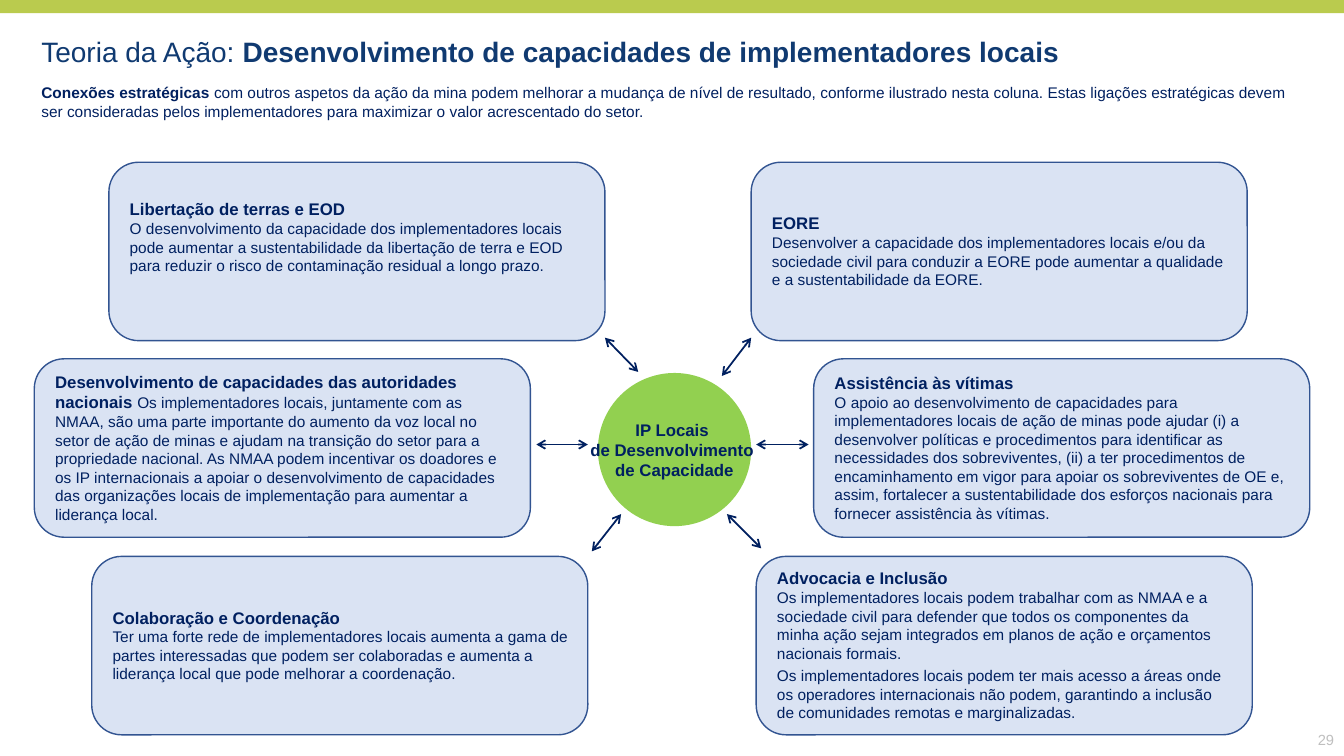
"""Build the slide on strategic connections of local implementers."""
from dataclasses import dataclass
from typing import NamedTuple

from lxml import etree
from pptx import Presentation
from pptx.dml import color
from pptx.enum import shapes, text
from pptx.oxml import ns
from pptx.util import Inches, Pt


@dataclass(frozen=True)
class Theme:
    font: str = "Arial"
    title: str = "103A71"
    ink: str = "002060"
    card: str = "DAE3F3"
    border: str = "325491"
    hub: str = "92D050"
    band: str = "BACB4E"
    number: str = "BFBFBF"
    title_size: float = 20
    heading_size: float = 12
    body_size: float = 11
    number_size: float = 10.5


class Span(NamedTuple):
    words: str
    size: float
    bold: bool = False
    ink: str = Theme.ink


class Card(NamedTuple):
    left: float
    top: float
    heading: str
    body: tuple[str, ...]
    inline: bool = False
    anchor: text.MSO_ANCHOR = text.MSO_ANCHOR.MIDDLE
    inset_top: float = 0.04


class Arrow(NamedTuple):
    start: tuple[float, float]
    end: tuple[float, float]


THEME = Theme()
CARD_WIDTH, CARD_HEIGHT = 4.92, 1.77
ROWS = (1.61, 3.56, 5.52)

CARDS = (
    Card(1.08, ROWS[0], "Libertação de terras e EOD", (
        "O desenvolvimento da capacidade dos implementadores locais pode aumentar a "
        "sustentabilidade da libertação de terra e EOD para reduzir o risco de "
        "contaminação residual a longo prazo.",),
        anchor=text.MSO_ANCHOR.TOP, inset_top=0.28),
    Card(7.45, ROWS[0], "EORE", (
        "Desenvolver a capacidade dos implementadores locais e/ou da sociedade civil "
        "para conduzir a EORE pode aumentar a qualidade e a sustentabilidade da EORE.",)),
    Card(0.34, ROWS[1], "Desenvolvimento de capacidades das autoridades nacionais ", (
        "Os implementadores locais, juntamente com as NMAA, são uma parte importante do "
        "aumento da voz local no setor de ação de minas e ajudam na transição do setor "
        "para a propriedade nacional. As NMAA podem incentivar os doadores e os IP "
        "internacionais a apoiar o desenvolvimento de capacidades das organizações "
        "locais de implementação para aumentar a liderança local.",), inline=True),
    Card(8.07, ROWS[1], "Assistência às vítimas", (
        "O apoio ao desenvolvimento de capacidades para implementadores locais de ação "
        "de minas pode ajudar (i) a desenvolver políticas e procedimentos para "
        "identificar as necessidades dos sobreviventes, (ii) a ter procedimentos de "
        "encaminhamento em vigor para apoiar os sobreviventes de OE e, assim, fortalecer "
        "a sustentabilidade dos esforços nacionais para fornecer assistência às vítimas.",)),
    Card(0.91, ROWS[2], "Colaboração e Coordenação", (
        "Ter uma forte rede de implementadores locais aumenta a gama de partes "
        "interessadas que podem ser colaboradas e aumenta a liderança local que pode "
        "melhorar a coordenação.",)),
    Card(7.5, ROWS[2], "Advocacia e Inclusão", (
        "Os implementadores locais podem trabalhar com as NMAA e a sociedade civil para "
        "defender que todos os componentes da minha ação sejam integrados em planos de "
        "ação e orçamentos nacionais formais.",
        "Os implementadores locais podem ter mais acesso a áreas onde os operadores "
        "internacionais não podem, garantindo a inclusão de comunidades remotas e "
        "marginalizadas.")),
)

ARROWS = (
    Arrow((6, 3.35), (6.33, 3.69)),
    Arrow((5.32, 4.41), (5.83, 4.41)),
    Arrow((7.5, 4.41), (8.02, 4.41)),
    Arrow((7.45, 3.35), (7.16, 3.73)),
    Arrow((7.21, 5.1), (7.55, 5.44)),
    Arrow((6.16, 5.1), (5.87, 5.47)),
)


def rgb(code: str) -> color.RGBColor:
    """Turn a hexadecimal code into a colour."""
    return color.RGBColor.from_string(code)


def write(box, paragraphs, *, align=text.PP_ALIGN.LEFT, anchor=text.MSO_ANCHOR.TOP,
          insets=(0.1, 0.05, 0.1, 0.05), wrap=True, gaps=()) -> None:
    """Fill a box with paragraphs of spans; gaps holds points after each paragraph."""
    frame = box.text_frame
    frame.word_wrap = wrap
    frame.vertical_anchor = anchor
    (frame.margin_left, frame.margin_top,
     frame.margin_right, frame.margin_bottom) = map(Inches, insets)
    for index, spans in enumerate(paragraphs):
        para = frame.add_paragraph() if index else frame.paragraphs[0]
        para.alignment = align
        if index < len(gaps):
            para.space_after = Pt(gaps[index])
        for span in spans:
            run = para.add_run()
            run.text = span.words
            run.font.name = THEME.font
            run.font.size = Pt(span.size)
            run.font.bold = span.bold
            run.font.color.rgb = rgb(span.ink)


def add_text(page, place: tuple[float, ...], paragraphs, **style) -> None:
    """Add a text box at left, top, width and height."""
    write(page.shapes.add_textbox(*map(Inches, place)), paragraphs, **style)


def add_block(page, kind, place: tuple[float, ...], fill: str, border: str = ""):
    """Add a flat filled shape with an optional border."""
    block = page.shapes.add_shape(kind, *map(Inches, place))
    block.shadow.inherit = False
    block.fill.solid()
    block.fill.fore_color.rgb = rgb(fill)
    if border:
        block.line.color.rgb = rgb(border)
        block.line.width = Pt(1)
    else:
        block.line.fill.background()
    return block


def add_card(page, card: Card) -> None:
    """Add a rounded card with its heading and body."""
    box = add_block(page, shapes.MSO_SHAPE.ROUNDED_RECTANGLE,
                    (card.left, card.top, CARD_WIDTH, CARD_HEIGHT),
                    THEME.card, THEME.border)
    heading = Span(card.heading, THEME.heading_size, bold=True)
    body = [Span(words, THEME.body_size) for words in card.body]
    paragraphs = [[heading, *body]] if card.inline else [[heading], *([span] for span in body)]
    gaps = (0, 3) if len(body) > 1 else ()
    write(box, paragraphs, anchor=card.anchor,
          insets=(0.12, card.inset_top, 0.1, 0.05), gaps=gaps)


def add_arrow(page, arrow: Arrow) -> None:
    """Add a line with an open arrowhead at both ends."""
    line = page.shapes.add_connector(shapes.MSO_CONNECTOR.STRAIGHT,
                                     *map(Inches, arrow.start + arrow.end))
    line.line.color.rgb = rgb(THEME.ink)
    line.line.width = Pt(1.25)
    outline = line.line._get_or_add_ln()
    for tip in ("a:headEnd", "a:tailEnd"):
        etree.SubElement(outline, ns.qn(tip), type="arrow")
    etree.SubElement(line._element.spPr, ns.qn("a:effectLst"))


def main() -> None:
    """Build and save the deck."""
    deck = Presentation()
    deck.slide_width, deck.slide_height = Inches(13.33), Inches(7.5)
    page = deck.slides.add_slide(deck.slide_layouts[6])

    add_block(page, shapes.MSO_SHAPE.RECTANGLE, (0, 0, 13.33, 0.13), THEME.band)
    add_text(page, (0.41, 0.34, 12.46, 0.81), [[
        Span("Teoria da Ação:", THEME.title_size, ink=THEME.title),
        Span(" Desenvolvimento de capacidades de implementadores locais",
             THEME.title_size, bold=True, ink=THEME.title)]], insets=(0, 0, 0, 0))
    add_text(page, (0.41, 0.78, 12.52, 0.47), [[
        Span("Conexões estratégicas ", THEME.body_size, bold=True),
        Span("com outros aspetos da ação da mina podem melhorar a mudança de nível de "
             "resultado, conforme ilustrado nesta coluna. Estas ligações estratégicas "
             "devem ser consideradas pelos implementadores para maximizar o valor "
             "acrescentado do setor.", THEME.body_size)]], insets=(0, 0.05, 0.1, 0.05))

    hub = add_block(page, shapes.MSO_SHAPE.FLOWCHART_CONNECTOR, (5.93, 3.7, 1.52, 1.52), THEME.hub)
    hub_lines = ("IP Locais ", "de Desenvolvimento ", "de Capacidade")
    write(hub, [[Span(words, THEME.heading_size, bold=True)] for words in hub_lines],
          align=text.PP_ALIGN.CENTER, anchor=text.MSO_ANCHOR.MIDDLE,
          insets=(0, 0.05, 0, 0.05), wrap=False)
    for card in CARDS:
        add_card(page, card)
    for arrow in ARROWS:
        add_arrow(page, arrow)
    add_text(page, (12.87, 7.17, 0.46, 0.33),
             [[Span("29", THEME.number_size, ink=THEME.number)]],
             align=text.PP_ALIGN.RIGHT, anchor=text.MSO_ANCHOR.MIDDLE)
    deck.save("out.pptx")


if __name__ == "__main__":
    main()
